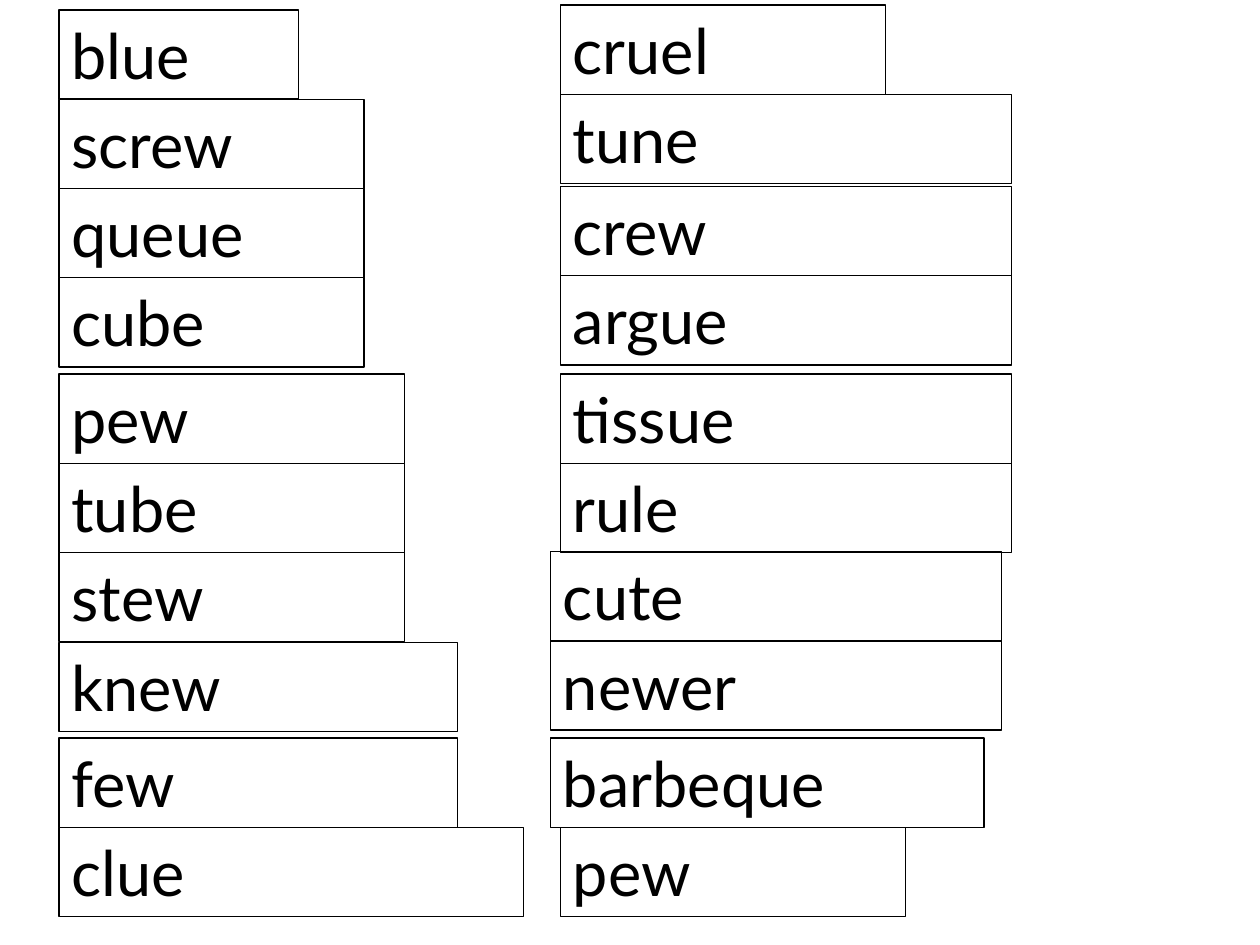
from pptx import Presentation
from pptx import util as u
from pptx.dml import color
from pptx.enum import text

BLACK = color.RGBColor(0, 0, 0)
HIGH = 1.8
LEFT, RIGHT, INNER = 1.19, 11.3, 11.1

STACKS = [
    (0.2, [(LEFT, 4.83, "blue"), (LEFT, 6.15, "screw"),
           (LEFT, 6.15, "queue"), (LEFT, 6.15, "cube")]),
    (7.54, [(LEFT, 6.96, "pew"), (LEFT, 6.96, "tube"), (LEFT, 6.96, "stew")]),
    (12.95, [(LEFT, 8.03, "knew")]),
    (14.88, [(LEFT, 8.03, "few"), (LEFT, 9.37, "clue")]),
    (0.1, [(RIGHT, 6.55, "cruel"), (RIGHT, 9.09, "tune")]),
    (3.76, [(RIGHT, 9.09, "crew"), (RIGHT, 9.09, "argue")]),
    (7.54, [(RIGHT, 9.09, "tissue"), (RIGHT, 9.09, "rule")]),
    (11.12, [(INNER, 9.09, "cute"), (INNER, 9.09, "newer")]),
    (14.88, [(INNER, 8.74, "barbeque"), (RIGHT, 6.96, "pew")]),
]


class Page:
    font = "Lato"
    size = u.Pt(36)
    line = u.Pt(0.75)

    def __init__(self, slide):
        self.slide = slide

    def card(self, left, top, width, word):
        box = self.slide.shapes.add_textbox(
            u.Cm(left), u.Cm(top), u.Cm(width), u.Cm(HIGH))
        box.line.color.rgb = BLACK
        box.line.width = self.line
        frame = box.text_frame
        frame.word_wrap = True
        frame.auto_size = text.MSO_AUTO_SIZE.SHAPE_TO_FIT_TEXT
        run = frame.paragraphs[0].add_run()
        run.text = word
        run.font.name = self.font
        run.font.size = self.size
        run.font.color.rgb = BLACK

    def stack(self, top, cards):
        for row, (left, width, word) in enumerate(cards):
            self.card(left, top + row * HIGH, width, word)


def main():
    deck = Presentation()
    deck.slide_width, deck.slide_height = u.Cm(25.4), u.Cm(19.05)
    page = Page(deck.slides.add_slide(deck.slide_layouts[6]))
    for top, cards in STACKS:
        page.stack(top, cards)
    deck.save("out.pptx")


if __name__ == "__main__":
    main()
